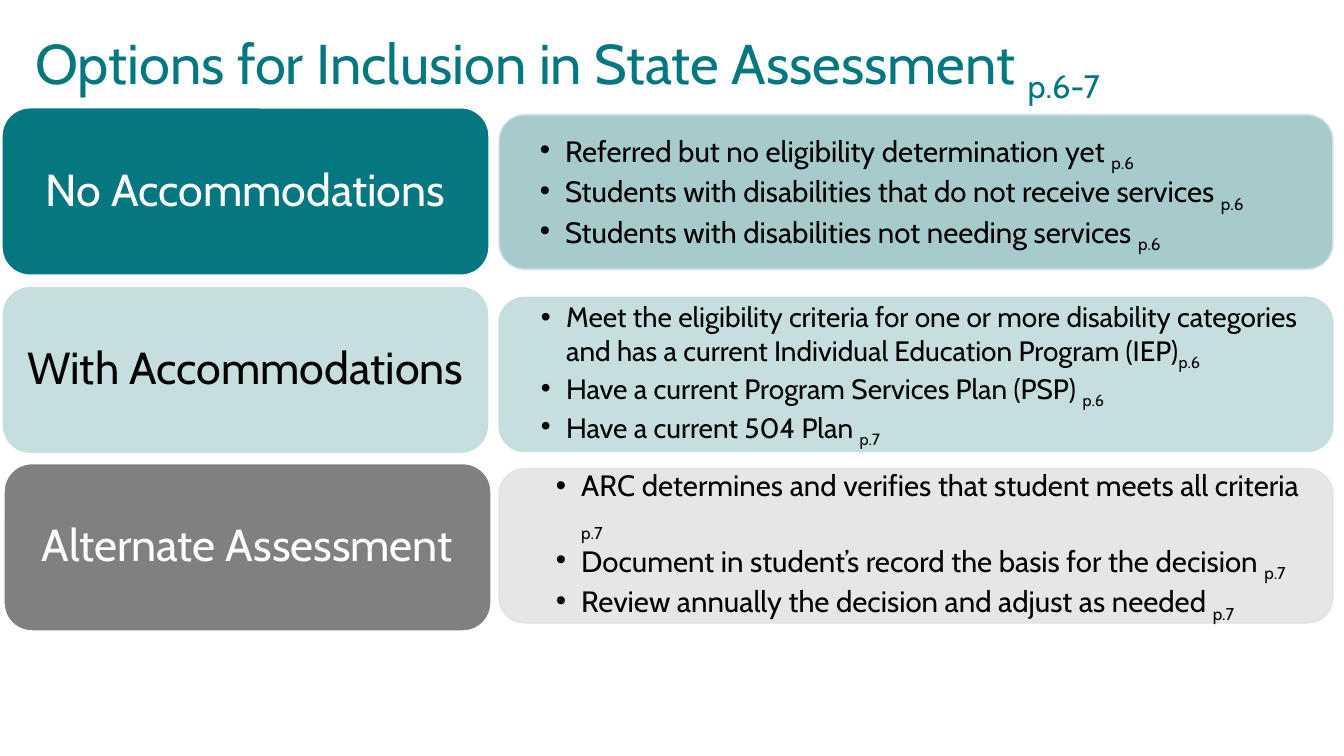
from lxml.etree import SubElement
from pptx import Presentation
from pptx.dml.color import RGBColor
from pptx.enum.shapes import MSO_SHAPE
from pptx.enum.text import MSO_ANCHOR, MSO_AUTO_SIZE, PP_ALIGN
from pptx.oxml.ns import qn
from pptx.util import Inches, Pt

FONT = "Cabin"
COLORS = {
    "teal": "057780", "title page": "007780", "mid teal": "A7CBCD",
    "pale teal": "C7DEDF", "gray": "808080", "light gray": "E7E6E6",
    "blue edge": "D2DEEF", "pink edge": "ECDBE9",
    "white": "FFFFFF", "black": "000000",
}
TITLE = ("Options for Inclusion in State Assessment ", "p.6-7")

OPTIONS = [
    {
        "label": "No Accommodations", "label_at": (0.02, 1.07),
        "label_fill": "teal", "label_color": "white",
        "panel_top": 1.14, "panel_fill": "mid teal", "panel_line": "blue edge",
        "inset": 0.33, "size": 21,
        "points": [
            ("Referred but no eligibility determination yet ", "p.6"),
            ("Students with disabilities that do not receive services ", "p.6"),
            ("Students with disabilities not needing services ", "p.6"),
        ],
    },
    {
        "label": "With Accommodations", "label_at": (0.02, 2.84),
        "label_fill": "pale teal", "label_color": "black",
        "panel_top": 2.95, "panel_fill": "pale teal", "panel_line": "pale teal",
        "inset": 0.34, "size": 20,
        "points": [
            ("Meet the eligibility criteria for one or more disability categories "
             "and has a current Individual Education Program (IEP)", "p.6"),
            ("Have a current Program Services Plan (PSP) ", "p.6"),
            ("Have a current 504 Plan ", "p.7"),
        ],
    },
    {
        "label": "Alternate Assessment", "label_at": (0.04, 4.6),
        "label_fill": "gray", "label_color": "white",
        "panel_top": 4.65, "panel_fill": "light gray", "panel_line": "pink edge",
        "inset": 0.49, "size": 21,
        "points": [
            ("ARC determines and verifies that student meets all criteria ", "p.7"),
            ("Document in student’s record the basis for the decision ", "p.7"),
            ("Review annually the decision and adjust as needed ", "p.7"),
        ],
    },
]
LABEL_SIZE = (4.83, 1.66)
PANEL_LEFT, PANEL_SIZE = 4.95, (8.27, 1.53)


def color(name):
    return RGBColor.from_string(COLORS[name])


def add_run(paragraph, text, size, color_name, subscript=False):
    run = paragraph.add_run()
    run.text = text
    run.font.name = FONT
    run.font.size = Pt(size)
    run.font.color.rgb = color(color_name)
    if subscript:
        run._r.get_or_add_rPr().set("baseline", "-25000")


def add_bullet(paragraph):
    properties = paragraph._p.get_or_add_pPr()
    properties.set("marL", str(Inches(0.25)))
    properties.set("indent", str(-Inches(0.25)))
    SubElement(properties, qn("a:buFont"), typeface="Arial")
    SubElement(properties, qn("a:buChar"), char="•")


def add_box(slide, position, size, fill, line, insets):
    """Add a rounded box and return its text frame; insets are left, right."""
    shape = slide.shapes.add_shape(
        MSO_SHAPE.ROUNDED_RECTANGLE, *map(Inches, position + size))
    shape.shadow.inherit = False
    shape.fill.solid()
    shape.fill.fore_color.rgb = color(fill)
    shape.line.color.rgb = color(line)
    shape.line.width = Pt(1)
    frame = shape.text_frame
    frame.word_wrap = True
    frame.vertical_anchor = MSO_ANCHOR.MIDDLE
    frame.margin_left, frame.margin_right = map(Inches, insets)
    frame.margin_top = frame.margin_bottom = Inches(0.04)
    return frame


def add_title(slide):
    title = slide.shapes.title
    title.left, title.top = Inches(0), Inches(-0.01)
    title.width, title.height = Inches(13.07), Inches(1.29)
    frame = title.text_frame
    frame.word_wrap = True
    frame.auto_size = MSO_AUTO_SIZE.NONE
    frame.vertical_anchor = MSO_ANCHOR.MIDDLE
    paragraph = frame.paragraphs[0]
    paragraph._p.get_or_add_pPr().set("marL", str(Inches(0.25)))
    paragraph.alignment = PP_ALIGN.LEFT
    paragraph.line_spacing = 0.9
    text, page = TITLE
    add_run(paragraph, text, 40, "teal")
    add_run(paragraph, page, 40, "title page", subscript=True)


def add_option(slide, option):
    label = add_box(slide, option["label_at"], LABEL_SIZE,
                    option["label_fill"], "white", (0.12, 0.12))
    paragraph = label.paragraphs[0]
    paragraph.alignment = PP_ALIGN.CENTER
    paragraph.line_spacing = 0.9
    add_run(paragraph, option["label"], 32, option["label_color"])

    panel = add_box(slide, (PANEL_LEFT, option["panel_top"]), PANEL_SIZE,
                    option["panel_fill"], option["panel_line"],
                    (option["inset"], 0.16))
    for index, (text, page) in enumerate(option["points"]):
        paragraph = panel.add_paragraph() if index else panel.paragraphs[0]
        add_bullet(paragraph)
        paragraph.alignment = PP_ALIGN.LEFT
        paragraph.line_spacing = 0.9
        paragraph.space_after = Pt(3)
        add_run(paragraph, text, option["size"], "black")
        add_run(paragraph, page, option["size"], "black", subscript=True)


def main():
    presentation = Presentation()
    presentation.slide_width = Inches(13.33)
    presentation.slide_height = Inches(7.5)
    slide = presentation.slides.add_slide(presentation.slide_layouts[5])
    add_title(slide)
    for option in OPTIONS:
        add_option(slide, option)
    presentation.save("out.pptx")


if __name__ == "__main__":
    main()
